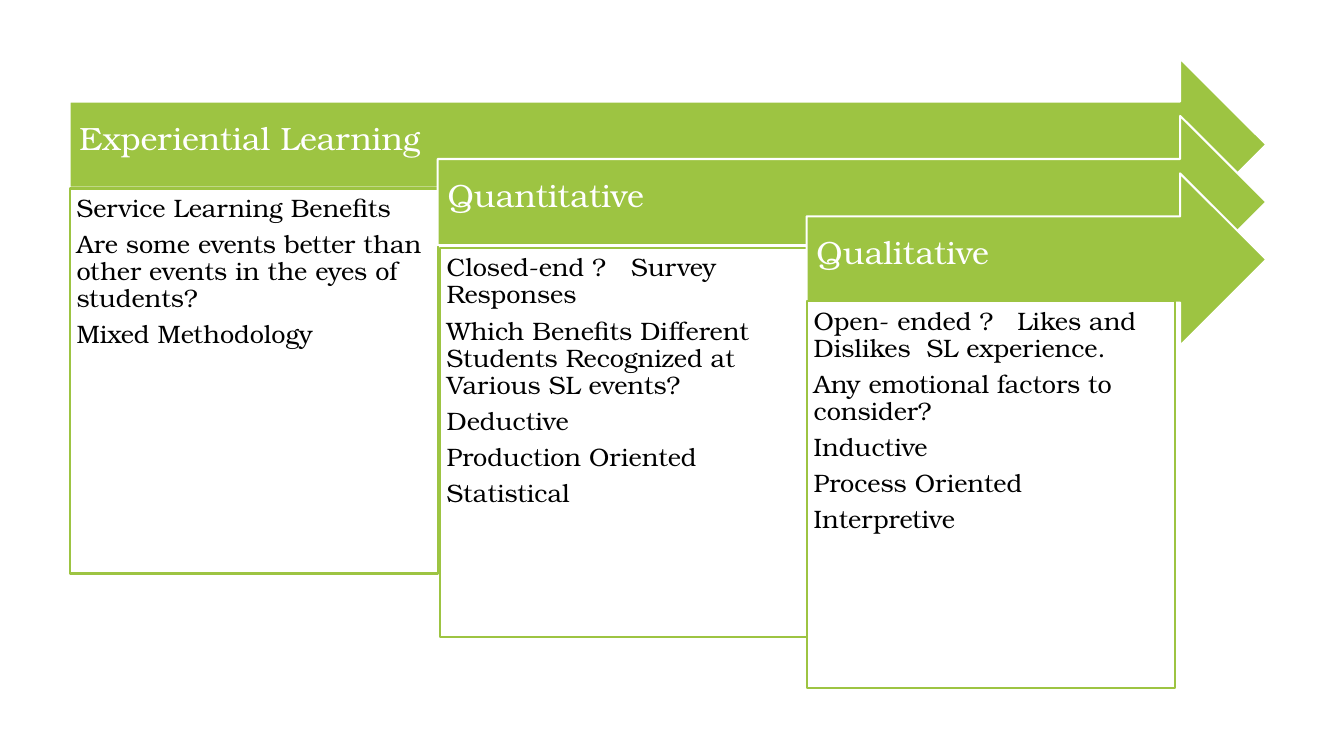
"""Build a slide of three overlapping arrows, each heading a box of research notes."""
from lxml import etree
from pptx import Presentation
from pptx.dml.color import RGBColor
from pptx.enum.shapes import MSO_SHAPE
from pptx.enum.text import MSO_ANCHOR, PP_ALIGN
from pptx.oxml.ns import qn
from pptx.util import Inches, Pt

ARROW = MSO_SHAPE.RIGHT_ARROW
RECTANGLE = MSO_SHAPE.RECTANGLE
MIDDLE = MSO_ANCHOR.MIDDLE
TOP = MSO_ANCHOR.TOP
LEFT = PP_ALIGN.LEFT

FONT = "TeX Gyre Bonum"
GREEN, WHITE, BLACK = "9DC442", "FFFFFF", "000000"
ARROW_TIP = 12.56
ARROW_TOP, ARROW_STEP, ARROW_HEIGHT = 0.58, 0.57, 1.71
BOX_WIDTH = 3.65

STAGES = [
    ("Experiential Learning", 0.69, (0.69, 1.87, 3.82), [], [
        "Service Learning Benefits",
        "Are some events better than other events in the eyes of students?",
        "Mixed Methodology"]),
    ("Quantitative", 4.34, (4.36, 2.46, 3.86), [1.83], [
        "Closed-end ?\tSurvey Responses",
        "Which Benefits Different Students Recognized at Various SL events?",
        "Deductive",
        "Production Oriented",
        "Statistical"]),
    ("Qualitative", 8, (8, 2.99, 3.84), [1.12, 2.02], [
        "Open- ended ?\tLikes and Dislikes\tSL experience.",
        "Any emotional factors to consider?",
        "Inductive",
        "Process Oriented",
        "Interpretive"]),
]


def color(hex_code):
    return RGBColor.from_string(hex_code)


def add_panel(kind, position, fill, line, lines, size, text_color, anchor, insets, tabs=()):
    shape = slide.shapes.add_shape(kind, *[Inches(value) for value in position])
    shape.shadow.inherit = False
    shape.fill.solid()
    shape.fill.fore_color.rgb = color(fill)
    shape.line.color.rgb = color(line)
    shape.line.width = Pt(1.5)
    frame = shape.text_frame
    frame.word_wrap = True
    frame.vertical_anchor = anchor
    frame.margin_left, frame.margin_top, frame.margin_right, frame.margin_bottom = [
        Inches(value) for value in insets]
    frame.text = "\n".join(lines)
    for index, paragraph in enumerate(frame.paragraphs):
        if tabs and index == 0:
            tab_list = etree.SubElement(paragraph._p.get_or_add_pPr(), qn("a:tabLst"))
            for stop in tabs:
                etree.SubElement(tab_list, qn("a:tab"), pos=str(Inches(stop)), algn="l")
        paragraph.alignment = LEFT
        paragraph.line_spacing = 0.9
        if index:
            paragraph.space_before = Pt(6.3)
        for run in paragraph.runs:
            run.font.name = FONT
            run.font.size = Pt(size)
            run.font.color.rgb = color(text_color)


presentation = Presentation()
presentation.slide_width = Inches(13.33)
presentation.slide_height = Inches(7.5)
slide = presentation.slides.add_slide(presentation.slide_layouts[6])

for number, (heading, arrow_left, box, tabs, notes) in enumerate(STAGES):
    arrow_top = ARROW_TOP + number * ARROW_STEP
    add_panel(ARROW, (arrow_left, arrow_top, ARROW_TIP - arrow_left, ARROW_HEIGHT),
              GREEN, WHITE, [heading], 23, WHITE, MIDDLE, (0.1, 0.1, 0.28, 0.2))
    box_left, box_top, box_height = box
    add_panel(RECTANGLE, (box_left, box_top, BOX_WIDTH, box_height),
              WHITE, GREEN, notes, 18, BLACK, TOP, (0.07, 0.07, 0.07, 0.07), tabs)

presentation.save("out.pptx")
